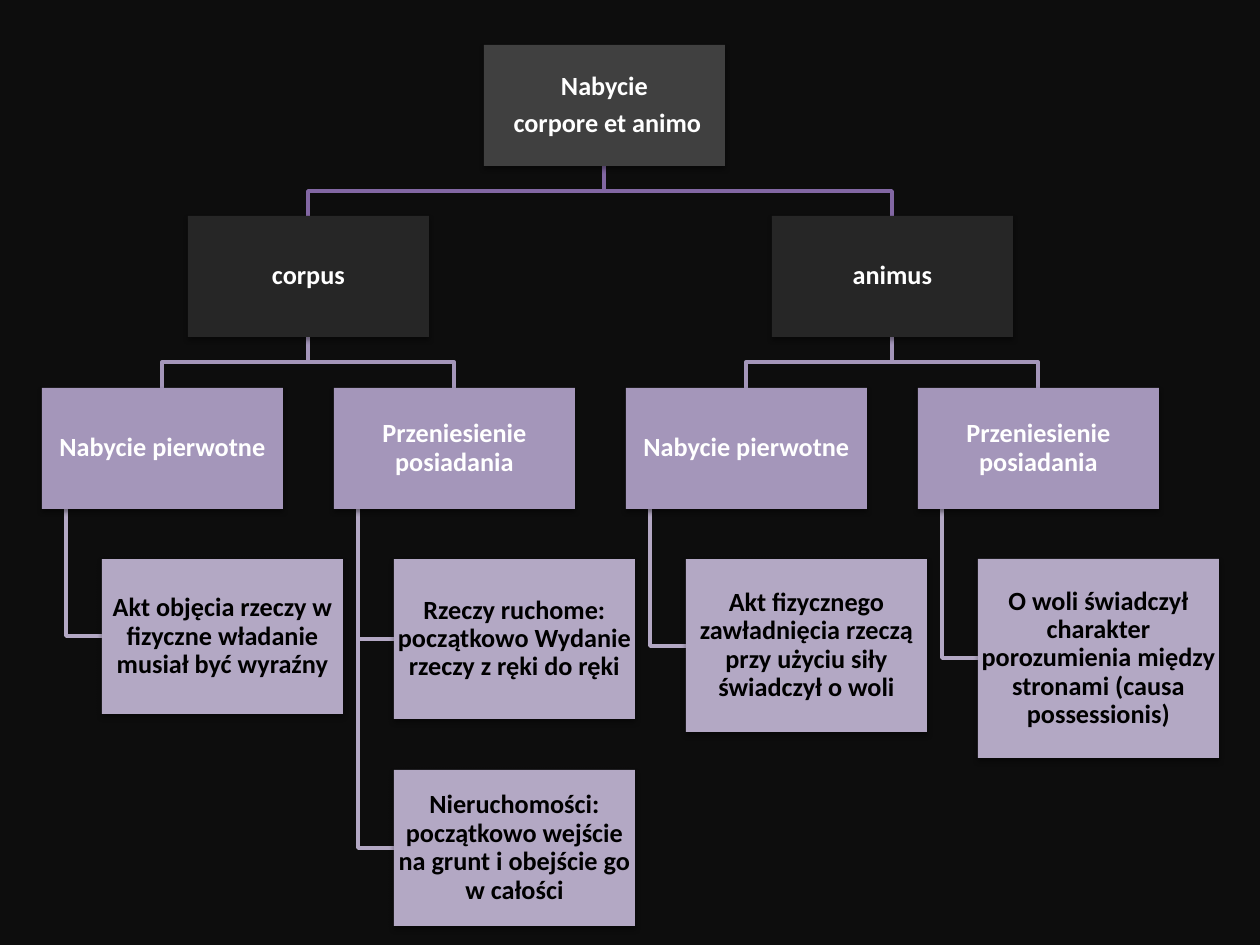
import pptx
import pptx.util
import pptx.dml.color
import pptx.enum.shapes
import pptx.enum.text
import pptx.oxml

HEX = {"back": "0D0D0D", "root": "404040", "part": "262626", "mode": "A496BA",
       "leaf": "B3A8C4", "stem": "8267A3", "light": "FFFFFF", "dark": "000000"}

ROOT = ["Nabycie", " corpore et animo"]
# Each part holds its modes; each mode holds leaves as (text, height in px).
TREE = [
    ("corpus", [
        ("Nabycie pierwotne", [
            ("Akt objęcia rzeczy w fizyczne władanie musiał być wyraźny", 155)]),
        ("Przeniesienie posiadania", [
            ("Rzeczy ruchome: początkowo Wydanie rzeczy z ręki do ręki", 160),
            ("Nieruchomości: początkowo wejście na grunt i obejście go w całości", 156)]),
    ]),
    ("animus", [
        ("Nabycie pierwotne", [
            ("Akt fizycznego zawładnięcia rzeczą przy użyciu siły świadczył o woli", 173)]),
        ("Przeniesienie posiadania", [
            ("O woli świadczył charakter porozumienia między stronami (causa possessionis)", 199)]),
    ]),
]

PX = 914400 // 126
WIDE, HIGH, GAP = 241, 121, 51
LEFT, STEP, ROOT_X = 42, 292, 484
ROWS = (45, 216, 388, 559)
SHADOW = ('<a:effectLst xmlns:a="http://schemas.openxmlformats.org/drawingml/2006/main">'
          '<a:outerShdw blurRad="39370" dist="20320" dir="5400000" rotWithShape="0">'
          '<a:srgbClr val="000000"><a:alpha val="38000"/></a:srgbClr>'
          '</a:outerShdw></a:effectLst>')


def color(name):
    return pptx.dml.color.RGBColor.from_string(HEX[name])


def layout():
    """Return the boxes (lines, x, y, height, kind) and the links (points, colour)."""
    boxes = [(ROOT, ROOT_X, ROWS[0], HIGH, "root")]
    links = []

    def fork(x, row, kid, tone):
        start, end = x + WIDE / 2, kid + WIDE / 2
        top, low = ROWS[row] + HIGH, ROWS[row + 1]
        mid = (top + low) / 2
        links.append(([(start, top), (start, mid), (end, mid), (end, low)], tone))

    col = 0
    for part, modes in TREE:
        x = LEFT + STEP * (col + (len(modes) - 1) / 2)
        boxes.append(([part], x, ROWS[1], HIGH, "part"))
        fork(ROOT_X, 0, x, "stem")
        for mode, leaves in modes:
            left = LEFT + STEP * col
            boxes.append(([mode], left, ROWS[2], HIGH, "mode"))
            fork(x, 1, left, "mode")
            trunk, inset, y = left + WIDE // 10, left + WIDE // 4, ROWS[3]
            for text, high in leaves:
                boxes.append(([text], inset, y, high, "leaf"))
                mid = y + high / 2
                links.append(([(trunk, ROWS[2] + HIGH), (trunk, mid), (inset, mid)], "leaf"))
                y += high + GAP
            col += 1
    return boxes, links


def draw_link(slide, points, tone):
    path = slide.shapes.build_freeform(*points[0], scale=PX)
    path.add_line_segments(points[1:], close=False)
    shape = path.convert_to_shape()
    shape.shadow.inherit = False
    shape.fill.background()
    shape.line.color.rgb = color(tone)
    shape.line.width = pptx.util.Pt(2)


def draw_box(slide, lines, x, y, high, kind):
    shape = slide.shapes.add_shape(pptx.enum.shapes.MSO_SHAPE.RECTANGLE,
                                   *(round(n * PX) for n in (x, y, WIDE, high)))
    shape.fill.solid()
    shape.fill.fore_color.rgb = color(kind)
    shape.line.fill.background()
    shape._element.spPr.append(pptx.oxml.parse_xml(SHADOW))
    frame = shape.text_frame
    frame.word_wrap = True
    frame.vertical_anchor = pptx.enum.text.MSO_ANCHOR.MIDDLE
    frame.margin_left = frame.margin_right = PX
    frame.margin_top = frame.margin_bottom = PX
    frame.text = "\n".join(lines)
    for para in frame.paragraphs:
        para.alignment = pptx.enum.text.PP_ALIGN.CENTER
        para.line_spacing = 0.9
        para.font.name = "Calibri"
        para.font.size = pptx.util.Pt(15)
        para.font.bold = True
        para.font.color.rgb = color("dark" if kind == "leaf" else "light")
    for para in frame.paragraphs[:-1]:
        para.space_after = pptx.util.Pt(5)


def main():
    deck = pptx.Presentation()
    deck.slide_width, deck.slide_height = 1260 * PX, 945 * PX
    slide = deck.slides.add_slide(deck.slide_layouts[6])
    slide.background.fill.solid()
    slide.background.fill.fore_color.rgb = color("back")
    boxes, links = layout()
    for link in links:
        draw_link(slide, *link)
    for box in boxes:
        draw_box(slide, *box)
    deck.save("out.pptx")


if __name__ == "__main__":
    main()
